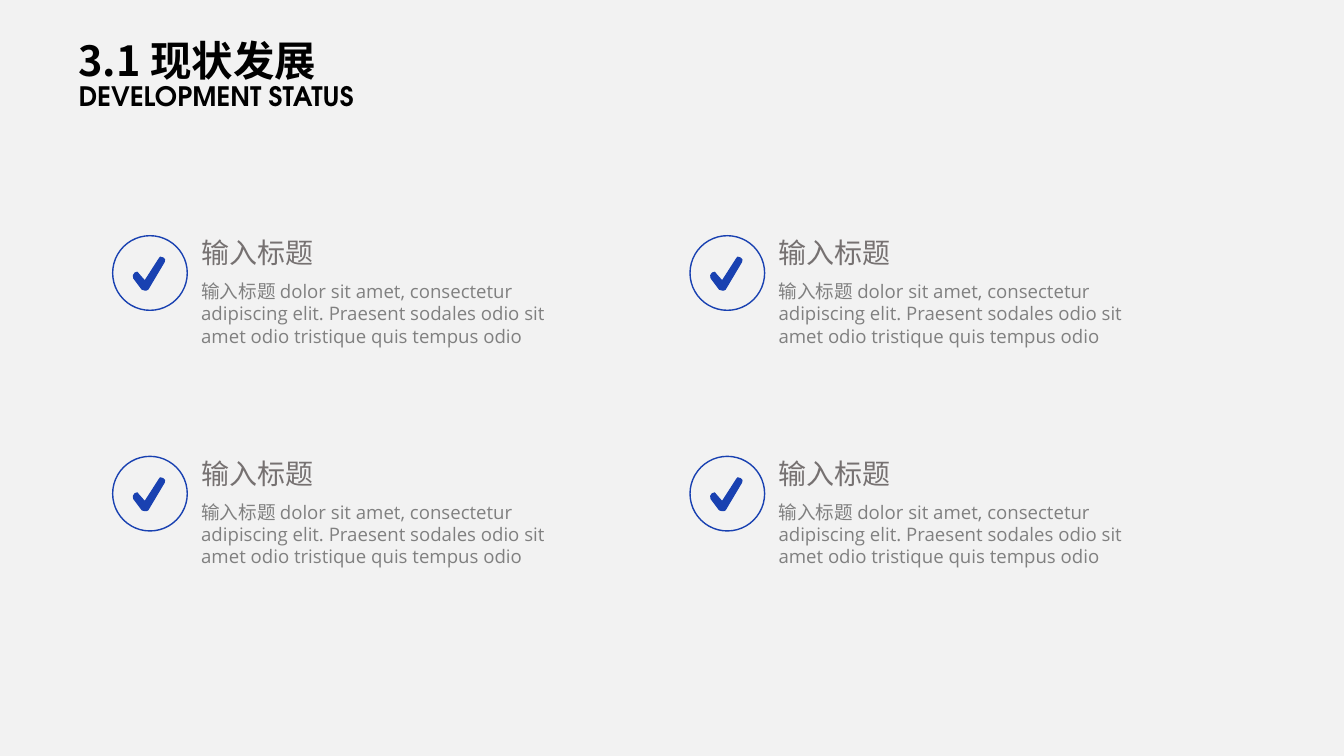
from pptx import Presentation
from pptx.dml.color import RGBColor
from pptx.enum import shapes, text
from pptx.util import Cm, Pt

# Content
HEADING = [
    # wording, font, size, line spacing
    ("3.1 现状发展", "Noto Sans CJK SC", 29.6, 38.1),
    ("DEVELOPMENT STATUS", "TeX Gyre Adventor", 19.1, 19.1),
]
ITEM = (
    "输入标题",
    "输入标题 dolor sit amet, consectetur adipiscing elit. "
    "Praesent sodales odio sit amet odio tristique quis tempus odio",
)
COLUMNS = [[ITEM, ITEM], [ITEM, ITEM]]

# Tick outline in hundredths of a centimetre from the circle's corner
TICK = [
    (81, 137), (74, 135), (53, 107), (52, 100), (56, 94), (62, 92), (66, 97),
    (81, 114), (117, 58), (120, 54), (127, 56), (131, 60), (130, 66),
    (89, 135), (85, 137),
]

BACKGROUND = RGBColor(0xF2, 0xF2, 0xF2)
BLACK = RGBColor(0, 0, 0)
BLUE = RGBColor(0x19, 0x41, 0xB1)
TITLE_GREY = RGBColor(0x76, 0x71, 0x71)
BODY_GREY = RGBColor(0x80, 0x80, 0x80)

# Grid of items, in centimetres
GRID_LEFT, GRID_TOP = 2.84, 5.94
COLUMN_STEP, ROW_STEP = 14.55, 5.56
CIRCLE_SIZE = 1.88
TEXT_OFFSET = 1.98


def style(paragraph, wording, font, size, colour):
    paragraph.text = wording
    paragraph.font.name = font
    paragraph.font.size = Pt(size)
    paragraph.font.color.rgb = colour


def add_label(parent, wording, left, top, width, height, size, colour):
    label = parent.add_textbox(Cm(left), Cm(top), Cm(width), Cm(height))
    label.text_frame.word_wrap = True
    style(label.text_frame.paragraphs[0], wording, "Open Sans", size, colour)


def add_item(slide, item, left, top):
    parent = slide.shapes.add_group_shape().shapes

    # Circle with tick
    circle = parent.add_shape(shapes.MSO_SHAPE.OVAL, Cm(left), Cm(top),
                              Cm(CIRCLE_SIZE), Cm(CIRCLE_SIZE))
    circle.fill.background()
    outline = parent.build_freeform(*TICK[0], scale=Cm(0.01))
    outline.add_line_segments(TICK[1:], close=True)
    tick = outline.convert_to_shape(Cm(left), Cm(top))
    tick.fill.solid()
    tick.fill.fore_color.rgb = BLUE
    for mark, line_width in ((circle, 1), (tick, 0.75)):
        mark.shadow.inherit = False
        mark.line.color.rgb = BLUE
        mark.line.width = Pt(line_width)

    # Title and body
    title, body = item
    text_left = left + TEXT_OFFSET
    add_label(parent, title, text_left, top - 0.13, 11.63, 1.12, 20, TITLE_GREY)
    add_label(parent, body, text_left, top + 0.99, 9.78, 1.96, 13.3, BODY_GREY)


def main():
    deck = Presentation()
    deck.slide_width, deck.slide_height = Cm(33.87), Cm(19.05)
    slide = deck.slides.add_slide(deck.slide_layouts[6])
    slide.background.fill.solid()
    slide.background.fill.fore_color.rgb = BACKGROUND

    # Heading
    heading = slide.shapes.add_textbox(Cm(1.98), Cm(0.79), Cm(7.06), Cm(2.16))
    frame = heading.text_frame
    frame.word_wrap = False
    frame.auto_size = text.MSO_AUTO_SIZE.SHAPE_TO_FIT_TEXT
    frame.margin_left = frame.margin_top = frame.margin_right = 0
    for index, (wording, font, size, spacing) in enumerate(HEADING):
        paragraph = frame.add_paragraph() if index else frame.paragraphs[0]
        style(paragraph, wording, font, size, BLACK)
        paragraph.font.bold = True
        paragraph.line_spacing = Pt(spacing)

    # Items
    for column, items in enumerate(COLUMNS):
        for row, item in enumerate(items):
            add_item(slide, item, GRID_LEFT + column * COLUMN_STEP,
                     GRID_TOP + row * ROW_STEP)

    deck.save("out.pptx")


if __name__ == "__main__":
    main()
